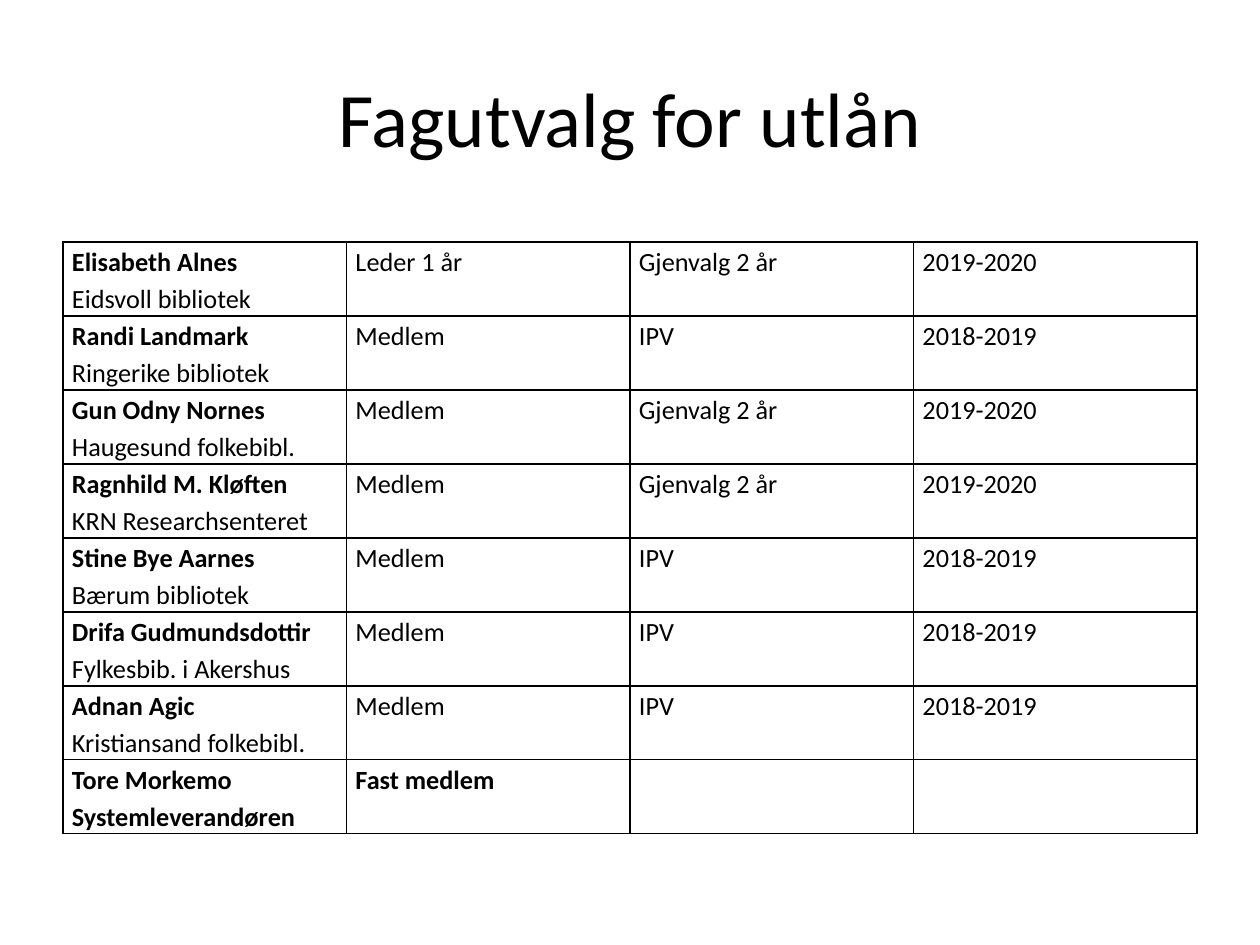
from typing import NamedTuple

from lxml.etree import SubElement
from pptx import Presentation
from pptx.dml.color import RGBColor
from pptx.enum.text import MSO_ANCHOR, PP_ALIGN
from pptx.oxml.ns import qn
from pptx.util import Emu, Pt

FONT = "Calibri"
BLACK = "000000"


class Member(NamedTuple):
    name: str
    workplace: str
    role: str
    election: str = ""
    period: str = ""
    permanent: bool = False


REELECTED = ("Gjenvalg 2 år", "2019-2020")
NOT_UP = ("IPV", "2018-2019")

MEMBERS = [
    Member("Elisabeth Alnes", "Eidsvoll bibliotek", "Leder 1 år", *REELECTED),
    Member("Randi Landmark", "Ringerike bibliotek", "Medlem", *NOT_UP),
    Member("Gun Odny Nornes", "Haugesund folkebibl.", "Medlem", *REELECTED),
    Member("Ragnhild M. Kløften", "KRN Researchsenteret", "Medlem", *REELECTED),
    Member("Stine Bye Aarnes", "Bærum bibliotek", "Medlem", *NOT_UP),
    Member("Drifa Gudmundsdottir", "Fylkesbib. i Akershus", "Medlem", *NOT_UP),
    Member("Adnan Agic", "Kristiansand folkebibl.", "Medlem", *NOT_UP),
    Member("Tore Morkemo", "Systemleverandøren", "Fast medlem", permanent=True),
]


def px(n: int) -> Emu:
    return Emu(round(n * 914400 / 126))


def color(value: str) -> RGBColor:
    return RGBColor.from_string(value)


def format_run(r, size: int, bold: bool = False) -> None:
    r.font.name = FONT
    r.font.size = Pt(size)
    r.font.bold = bold
    r.font.color.rgb = color(BLACK)


def add_borders(cell) -> None:
    tc_pr = cell._tc.get_or_add_tcPr()
    for side in ("lnL", "lnR", "lnT", "lnB"):
        ln = SubElement(tc_pr, qn(f"a:{side}"), w=str(Pt(1)))
        fill = SubElement(ln, qn("a:solidFill"))
        SubElement(fill, qn("a:srgbClr"), val=BLACK)


def fill_cell(cell, text: str, bold_lines: int) -> None:
    """Write the text with its first bold_lines lines in bold."""
    add_borders(cell)
    cell.fill.background()
    cell.margin_left = cell.margin_right = px(9)
    cell.margin_top = cell.margin_bottom = 0
    p = cell.text_frame.paragraphs[0]
    p.text = text
    p.line_spacing = 1.15
    for i, r in enumerate(p.runs):
        format_run(r, 15, bold=i < bold_lines)


def add_title(slide, text: str) -> None:
    sp = slide.shapes.title
    sp.left, sp.top, sp.width, sp.height = px(63), px(38), px(1134), px(158)
    tf = sp.text_frame
    tf.text = text
    tf.vertical_anchor = MSO_ANCHOR.MIDDLE
    p = tf.paragraphs[0]
    p.alignment = PP_ALIGN.CENTER
    format_run(p.runs[0], 44)


def add_member_table(slide, members: list[Member]) -> None:
    frame = slide.shapes.add_table(
        len(members), 4, px(63), px(242), px(1134), px(74 * len(members)))
    table = frame.table
    table.first_row = table.horz_banding = False
    for row, m in zip(table.rows, members):
        texts = (f"{m.name}\n{m.workplace}", m.role, m.election, m.period)
        for col, (cell, text) in enumerate(zip(row.cells, texts)):
            bold_lines = 2 if m.permanent else int(col == 0)
            fill_cell(cell, text, bold_lines)


def main() -> None:
    prs = Presentation()
    prs.slide_width, prs.slide_height = px(1260), px(945)
    slide = prs.slides.add_slide(prs.slide_layouts[5])
    add_title(slide, "Fagutvalg for utlån")
    add_member_table(slide, MEMBERS)
    prs.save("out.pptx")


if __name__ == "__main__":
    main()
